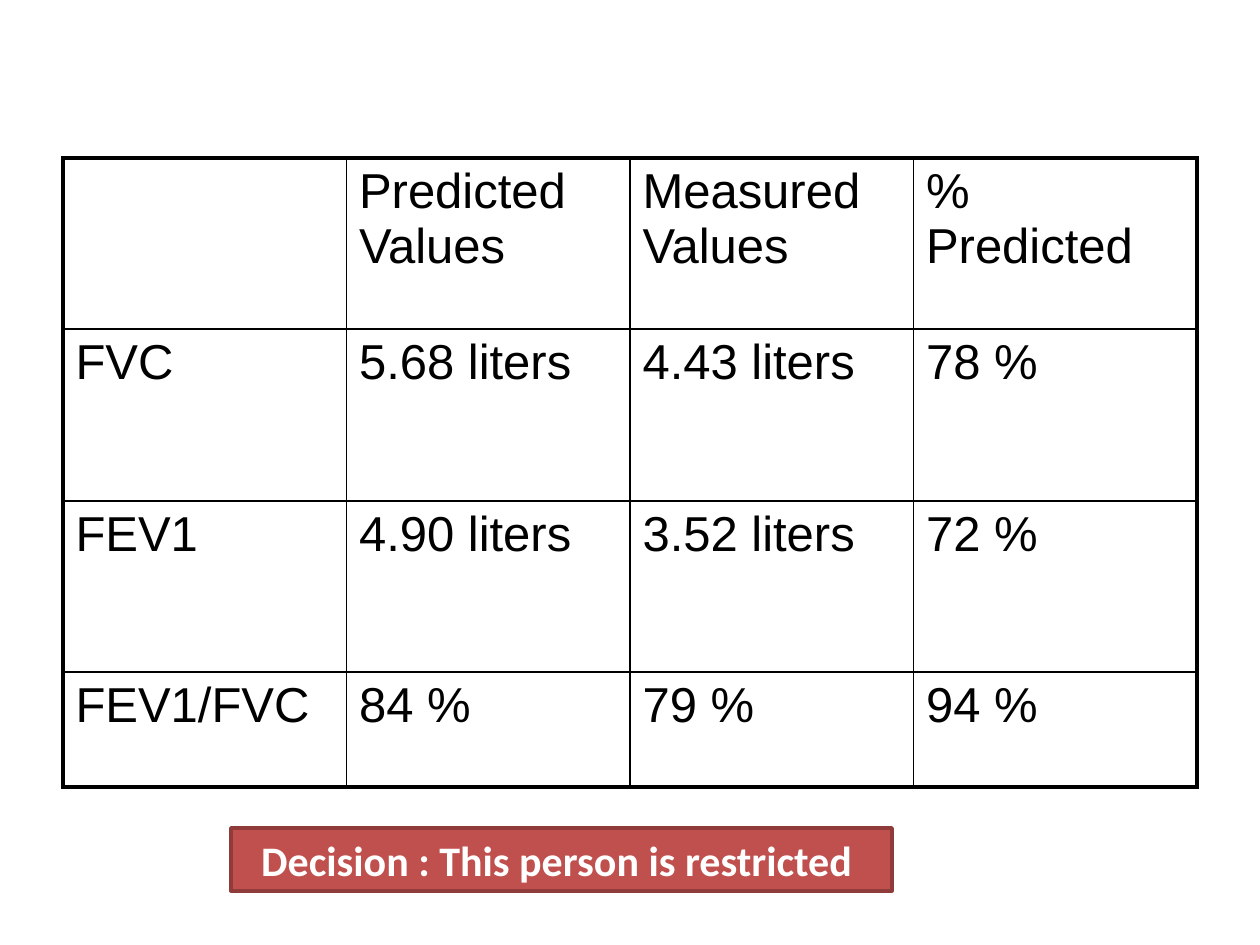
from lxml.etree import SubElement
from pptx import Presentation
from pptx.dml.color import RGBColor
from pptx.enum.shapes import MSO_SHAPE as Shape
from pptx.enum.text import MSO_ANCHOR as Anchor, MSO_AUTO_SIZE as AutoSize, PP_ALIGN as Align
from pptx.oxml.ns import qn
from pptx.util import Emu, Inches, Pt

PX_PER_INCH = 126
BLACK = RGBColor(0x00, 0x00, 0x00)
WHITE = RGBColor(0xFF, 0xFF, 0xFF)
RED = RGBColor(0xC0, 0x50, 0x4D)
DARK_RED = RGBColor(0x8E, 0x3B, 0x39)

CELL_FONT = {"name": "Arial", "size": Pt(28), "bold": False}
DECISION_FONT = {"name": "Calibri", "size": Pt(24), "bold": True}
INNER_BORDER, OUTER_BORDER = Pt(1), Pt(2.25)

SPIROMETRY = [
    ["", "Predicted Values", "Measured Values", "% Predicted"],
    ["FVC", "5.68 liters", "4.43 liters", "78 %"],
    ["FEV1", "4.90 liters", "3.52 liters", "72 %"],
    ["FEV1/FVC", "84 %", "79 %", "94 %"],
]
ROW_HEIGHTS = [171, 172, 171, 115]


def px(length):
    return Emu(round(length * Inches(1) / PX_PER_INCH))


def set_attributes(target, values):
    for name, value in values.items():
        setattr(target, name, value)


class SlideBuilder:
    """Holds the current slide and draws each kind of element on it."""

    def __init__(self, slide):
        self.slide = slide

    def add_text(self, frame, text, font, color):
        run = frame.paragraphs[0].add_run()
        run.text = text
        set_attributes(run.font, font)
        run.font.color.rgb = color

    def border(self, cell, side, width):
        """Draw one cell edge; side is L, R, T or B."""
        line = SubElement(cell._tc.get_or_add_tcPr(), qn(f"a:ln{side}"), w=str(width))
        fill = SubElement(line, qn("a:solidFill"))
        SubElement(fill, qn("a:srgbClr"), val=str(BLACK))

    def table(self, left, top, width, row_heights, rows):
        row_count, column_count = len(rows), len(rows[0])
        table = self.slide.shapes.add_table(
            row_count, column_count, px(left), px(top), px(width), px(sum(row_heights))
        ).table
        set_attributes(table, {"first_row": False, "horz_banding": False})
        for row, height in zip(table.rows, row_heights):
            row.height = px(height)
        for r, texts in enumerate(rows):
            for c, text in enumerate(texts):
                cell = table.cell(r, c)
                is_outer = {
                    "L": c == 0,
                    "R": c == column_count - 1,
                    "T": r == 0,
                    "B": r == row_count - 1,
                }
                for side, outer in is_outer.items():
                    self.border(cell, side, OUTER_BORDER if outer else INNER_BORDER)
                cell.fill.background()
                if text:
                    self.add_text(cell.text_frame, text, CELL_FONT, BLACK)

    def banner(self, left, top, width, height, text):
        banner = self.slide.shapes.add_shape(
            Shape.RECTANGLE, px(left), px(top), px(width), px(height)
        )
        banner.shadow.inherit = False
        banner.fill.solid()
        banner.fill.fore_color.rgb = RED
        banner.line.color.rgb = DARK_RED
        banner.line.width = Pt(2)
        frame = banner.text_frame
        set_attributes(frame, {
            "word_wrap": True,
            "vertical_anchor": Anchor.MIDDLE,
            "auto_size": AutoSize.SHAPE_TO_FIT_TEXT,
        })
        frame.paragraphs[0].alignment = Align.CENTER
        self.add_text(frame, text, DECISION_FONT, WHITE)


def main():
    presentation = Presentation()
    set_attributes(presentation, {"slide_width": px(1260), "slide_height": px(945)})
    blank_layout = presentation.slide_layouts[6]
    builder = SlideBuilder(presentation.slides.add_slide(blank_layout))
    builder.table(63, 158, 1134, ROW_HEIGHTS, SPIROMETRY)
    builder.banner(231, 828, 661, 63, "Decision : This person is restricted ")
    presentation.save("out.pptx")


if __name__ == "__main__":
    main()
